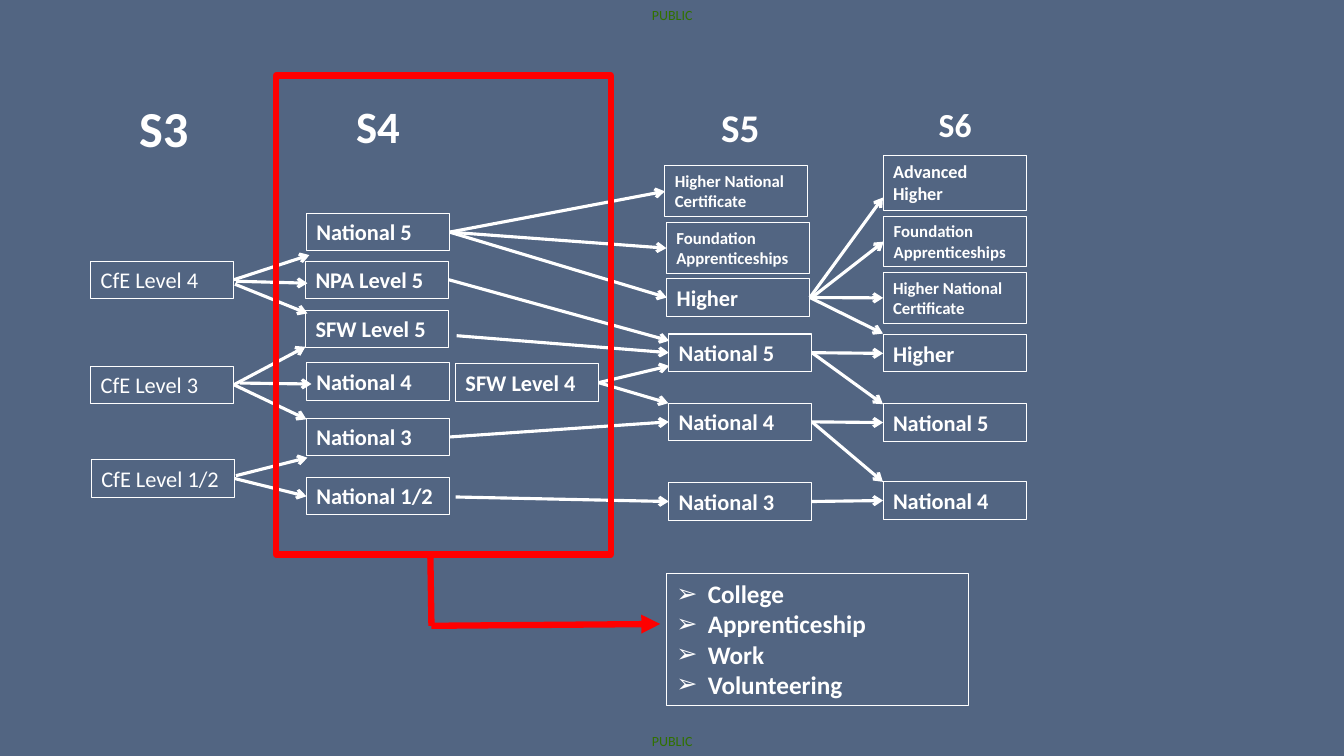
from dataclasses import dataclass

from lxml import etree
from pptx import Presentation
from pptx.dml.color import RGBColor
from pptx.enum.shapes import MSO_CONNECTOR, MSO_SHAPE
from pptx.enum.text import MSO_ANCHOR, PP_ALIGN
from pptx.oxml.ns import qn
from pptx.util import Pt

RECT = MSO_SHAPE.RECTANGLE
LINE = MSO_CONNECTOR.STRAIGHT
TOP, MIDDLE = MSO_ANCHOR.TOP, MSO_ANCHOR.MIDDLE
LEFT, CENTER = PP_ALIGN.LEFT, PP_ALIGN.CENTER
WEST, EAST = 1, 3


@dataclass(frozen=True)
class Theme:
    """Colours, font and type sizes of the slide."""
    back: RGBColor = RGBColor(0x52, 0x65, 0x82)
    white: RGBColor = RGBColor(0xFF, 0xFF, 0xFF)
    red: RGBColor = RGBColor(0xFF, 0x00, 0x00)
    green: RGBColor = RGBColor(0x31, 0x71, 0x00)
    font: str = "Calibri"
    mark: int = 10
    small: int = 12
    mid: int = 13
    body: int = 16
    list: int = 18
    thin: float = 0.75
    arrow: float = 2.25
    thick: float = 4.5


THEME = Theme()
HEIGHTS = {THEME.small: 36.35, THEME.mid: 38.8, THEME.body: 26.65}
WIDTH = 102.25

HEADS = [
    ("S3", 36, 80.5, 65.5, 73), ("S4", 32, 242, 67, 56),
    ("S5", 28, 506, 70, 45.5), ("S6", 24, 659.5, 70.5, 45.5),
]
BOXES = {
    "S3": [
        ("CfE Level 4", 64.8, 186.5, THEME.body),
        ("CfE Level 3", 64.8, 261.5, THEME.body),
        ("CfE Level 1/2", 65.3, 328.5, THEME.body),
    ],
    "S4": [
        ("National 5", 218.9, 152.5, THEME.body),
        ("NPA Level 5", 218.3, 186.5, THEME.body),
        ("SFW Level 5", 218.3, 221.8, THEME.body),
        ("National 4", 218.9, 259.2, THEME.body),
        ("SFW Level 4", 325.4, 260, THEME.body),
        ("National 3", 218.9, 298.8, THEME.body),
        ("National 1/2", 218.9, 341.2, THEME.body),
    ],
    "S5": [
        ("Higher National Certificate", 474.9, 118.5, THEME.small),
        ("Foundation Apprenticeships", 476, 159.1, THEME.small),
        ("Higher", 476.3, 199.2, THEME.body),
        ("National 5", 477.7, 238.6, THEME.body),
        ("National 4", 477.7, 288, THEME.body),
        ("National 3", 477.7, 344.9, THEME.body),
    ],
    "S6": [
        ("Advanced Higher", 630.8, 111.3, THEME.mid),
        ("Foundation Apprenticeships", 631.3, 154.4, THEME.small),
        ("Higher National Certificate", 630.8, 194.6, THEME.small),
        ("Higher", 630.8, 239.1, THEME.body),
        ("National 5", 630.8, 288.5, THEME.body),
        ("National 4", 630.8, 344.2, THEME.body),
    ],
}
LINKS = [
    ("S3 CfE Level 4", (221, 182.2)),
    ((168.5, 200.9), (219.6, 202.3)),
    ((167.8, 203), (219.6, 223.9)),
    ("S3 CfE Level 3", (218.2, 247.7)),
    ((171.4, 273.6), (222.5, 274.3)),
    ("S3 CfE Level 3", (218.9, 299.5)),
    ((168.5, 339.8), (219.6, 326.9)),
    ("S3 CfE Level 1/2", "S4 National 1/2"),
    ("S4 National 5", "S5 Higher National Certificate"),
    ("S4 National 5", "S5 Foundation Apprenticeships"),
    ("S4 National 5", "S5 Higher"),
    ("S4 NPA Level 5", (478, 243.4)),
    ((326.2, 239.8), "S5 National 5"),
    ("S4 SFW Level 4", (478, 261.4)),
    ("S4 SFW Level 4", (477.4, 288)),
    ("S4 National 3", "S5 National 4"),
    ((325.4, 355), "S5 National 3"),
    ("S5 Higher", (630.7, 141.1)),
    ((581, 211.7), "S6 Foundation Apprenticeships"),
    ("S5 Higher", "S6 Higher National Certificate"),
    ("S5 Higher", (630.7, 238.3)),
    ("S5 National 5", "S6 Higher"),
    ("S5 National 5", (630.7, 288.7)),
    ("S5 National 4", "S6 National 5"),
    ("S5 National 4", (630.7, 344.2)),
    ("S5 National 3", "S6 National 4"),
]
ROUTES = ["College", "Apprenticeship", "Work", "Volunteering"]


def assign(item, values):
    """Set each named attribute on the item."""
    for name, value in values.items():
        setattr(item, name, value)


def write(shape, lines, size, color=THEME.white, bold=True, align=LEFT):
    """Write one paragraph per line into the shape."""
    frame = shape.text_frame
    assign(frame, {"word_wrap": True, "vertical_anchor": TOP})
    frame.text = "\n".join(lines)
    for para in frame.paragraphs:
        para.alignment = align
        assign(para.font, {"name": THEME.font, "size": Pt(size), "bold": bold})
        para.font.color.rgb = color


def label(slide, text, size, x, y, w, h, **style):
    """Add a centred text box."""
    box = slide.shapes.add_textbox(Pt(x), Pt(y), Pt(w), Pt(h))
    write(box, [text], size, align=CENTER, **style)
    return box


def mark(slide, y):
    """Add a small marking at the slide's edge."""
    box = label(slide, "PUBLIC", THEME.mark, 455, y, 50.4, 20.9,
                color=THEME.green, bold=False)
    sides = ("margin_left", "margin_right", "margin_top", "margin_bottom")
    assign(box.text_frame, dict.fromkeys(sides, 0))
    box.text_frame.vertical_anchor = MIDDLE


def outline(slide, x, y, w, h, color=THEME.white, width=THEME.thin):
    """Add an unfilled rectangle."""
    box = slide.shapes.add_shape(RECT, Pt(x), Pt(y), Pt(w), Pt(h))
    box.shadow.inherit = False
    box.fill.background()
    box.line.color.rgb = color
    box.line.width = Pt(width)
    return box


def link(slide, start, end, boxes, color=THEME.white, width=THEME.arrow,
         head="arrow"):
    """Add a line between two points or named boxes."""
    x1, y1 = (0, 0) if start in boxes else start
    x2, y2 = (0, 0) if end in boxes else end
    line = slide.shapes.add_connector(LINE, Pt(x1), Pt(y1), Pt(x2), Pt(y2))
    if start in boxes:
        line.begin_connect(boxes[start], EAST)
    if end in boxes:
        line.end_connect(boxes[end], WEST)
    line.line.color.rgb = color
    line.line.width = Pt(width)
    if head:
        stroke = line.line._get_or_add_ln()
        etree.SubElement(stroke, qn("a:tailEnd"), type=head)
    etree.SubElement(line._element.spPr, qn("a:effectLst"))


def bullets(shape):
    """Give each paragraph an arrow bullet and a hanging indent."""
    for para in shape.text_frame.paragraphs:
        props = para._p.get_or_add_pPr()
        props.set("marL", str(Pt(22.5)))
        props.set("indent", str(-Pt(22.5)))
        etree.SubElement(props, qn("a:buFont"), typeface=THEME.font)
        etree.SubElement(props, qn("a:buChar"), char="➢")
        props.append(props.find(qn("a:defRPr")))


def main():
    """Build and save the slide."""
    deck = Presentation()
    assign(deck, {"slide_width": Pt(960), "slide_height": Pt(540)})
    slide = deck.slides.add_slide(deck.slide_layouts[6])
    slide.background.fill.solid()
    slide.background.fill.fore_color.rgb = THEME.back
    for y in (0, 519.1):
        mark(slide, y)
    for text, size, x, y, w in HEADS:
        label(slide, text, size, x, y, w, size * 1.2 + 7.2)
    boxes = {}
    for stage, items in BOXES.items():
        for text, x, y, size in items:
            box = outline(slide, x, y, WIDTH, HEIGHTS[size])
            write(box, [text], size, bold=stage != "S3")
            boxes[f"{stage} {text}"] = box
    for start, end in LINKS:
        link(slide, start, end, boxes)
    outline(slide, 197.3, 54, 239, 342, THEME.red, THEME.thick)
    turn = (308.2, 447)
    link(slide, (307.4, 396), turn, boxes, THEME.red, THEME.thick, None)
    link(slide, turn, (471.6, 445.7), boxes, THEME.red, THEME.thick, "triangle")
    routes = outline(slide, 476, 409.6, 216, 94.4)
    write(routes, ROUTES, THEME.list)
    bullets(routes)
    deck.save("out.pptx")


if __name__ == "__main__":
    main()
